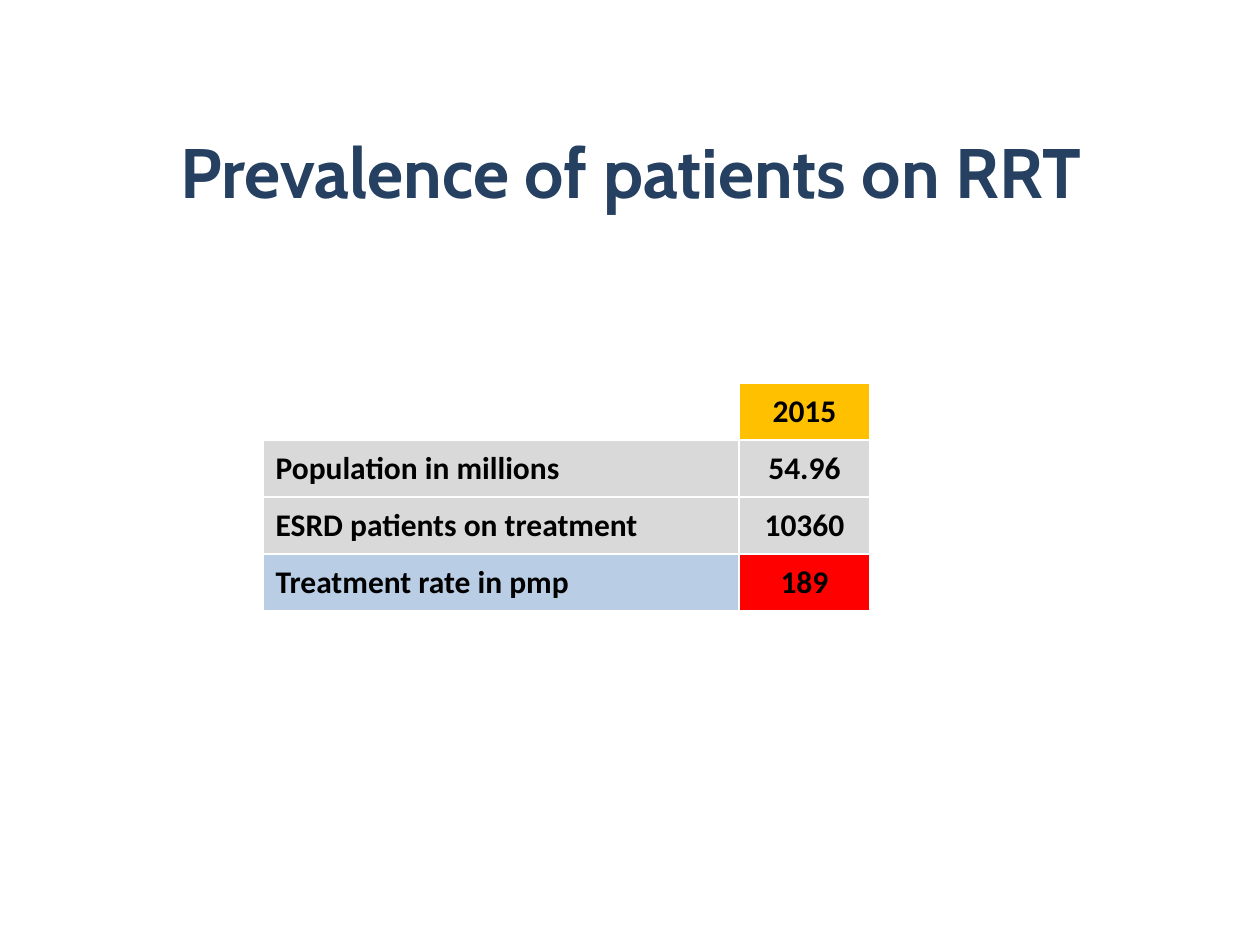
from typing import NamedTuple, Optional

from pptx import Presentation
from pptx.dml.color import RGBColor
from pptx.enum.text import MSO_ANCHOR, PP_ALIGN
from pptx.util import Emu, Pt

NAVY = RGBColor(0x25, 0x40, 0x61)
BLACK = RGBColor(0x00, 0x00, 0x00)
AMBER = RGBColor(0xFF, 0xC0, 0x00)
GREY = RGBColor(0xD9, 0xD9, 0xD9)
BLUE = RGBColor(0xB9, 0xCD, 0xE5)
RED = RGBColor(0xFF, 0x00, 0x00)

PX_PER_INCH = 126
COL_WIDTHS = (476, 131)
ROW_HEIGHT = 57


class Row(NamedTuple):
    label: str
    value: str
    label_fill: Optional[RGBColor]
    value_fill: RGBColor


ROWS = (
    Row("", "2015", None, AMBER),
    Row("Population in millions", "54.96", GREY, GREY),
    Row("ESRD patients on treatment", "10360", GREY, GREY),
    Row("Treatment rate in pmp", "189", BLUE, RED),
)


def px(n: int) -> Emu:
    return Emu(round(n * 914400 / PX_PER_INCH))


def style_text(p, font: str, size: int, color: RGBColor, align: PP_ALIGN) -> None:
    p.alignment = align
    p.font.name = font
    p.font.size = Pt(size)
    p.font.bold = True
    p.font.color.rgb = color


def fill_cell(cell, text: str, fill: Optional[RGBColor], align: PP_ALIGN) -> None:
    cell.vertical_anchor = MSO_ANCHOR.MIDDLE
    if fill is None:
        cell.fill.background()
    else:
        cell.fill.solid()
        cell.fill.fore_color.rgb = fill
    cell.text = text
    style_text(cell.text_frame.paragraphs[0], "Calibri", 18, BLACK, align)


def add_title(s, text: str) -> None:
    sp = s.shapes.title
    sp.left, sp.top, sp.width, sp.height = px(64), px(106), px(1134), px(129)
    tf = sp.text_frame
    tf.text = text
    tf.vertical_anchor = MSO_ANCHOR.MIDDLE
    style_text(tf.paragraphs[0], "Cabin", 40, NAVY, PP_ALIGN.CENTER)


def add_rates(s, left: int, top: int) -> None:
    table = s.shapes.add_table(
        len(ROWS), len(COL_WIDTHS), px(left), px(top),
        px(sum(COL_WIDTHS)), px(ROW_HEIGHT * len(ROWS)),
    ).table
    table.horz_banding = False
    for col, width in zip(table.columns, COL_WIDTHS):
        col.width = px(width)
    for i, row in enumerate(ROWS):
        table.rows[i].height = px(ROW_HEIGHT)
        fill_cell(table.cell(i, 0), row.label, row.label_fill, PP_ALIGN.LEFT)
        fill_cell(table.cell(i, 1), row.value, row.value_fill, PP_ALIGN.CENTER)


def main() -> None:
    prs = Presentation()
    prs.slide_width, prs.slide_height = px(1260), px(945)
    s = prs.slides.add_slide(prs.slide_layouts[5])
    add_rates(s, 263, 383)
    add_title(s, "Prevalence of patients on RRT")
    prs.save("out.pptx")


if __name__ == "__main__":
    main()
